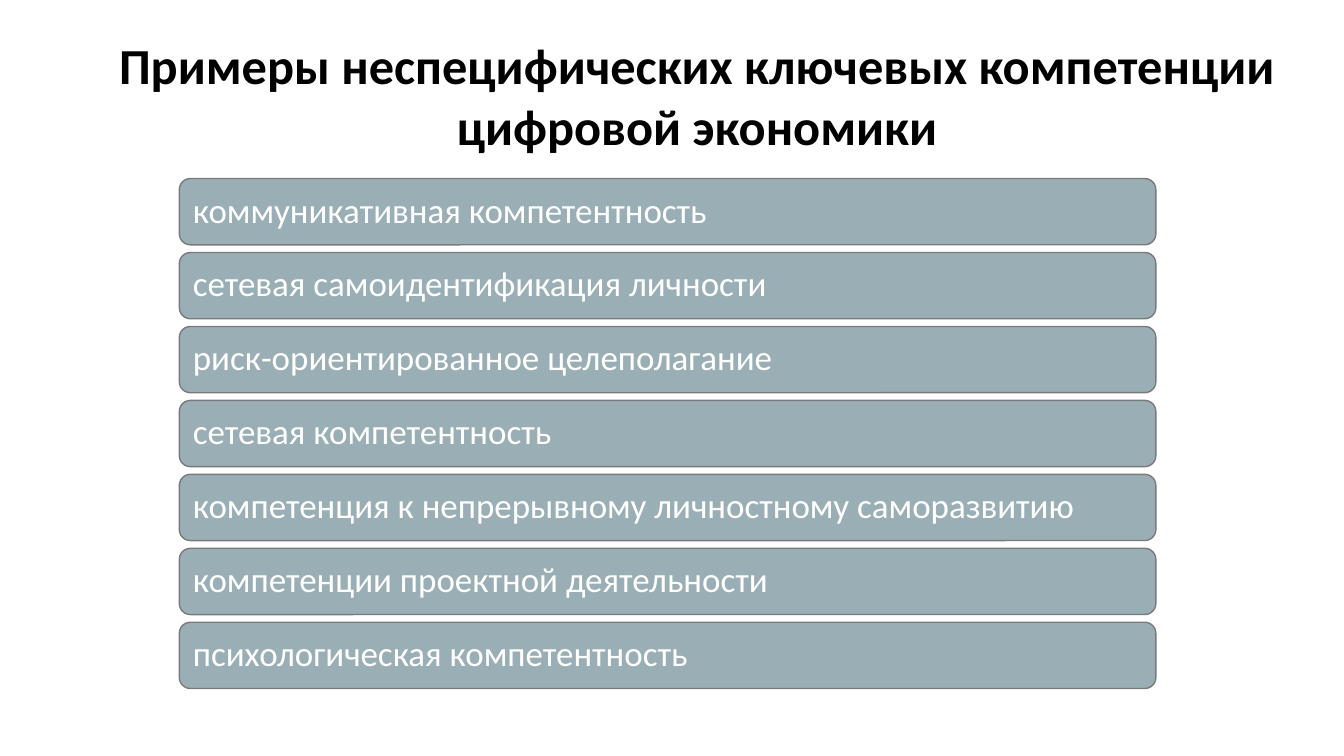
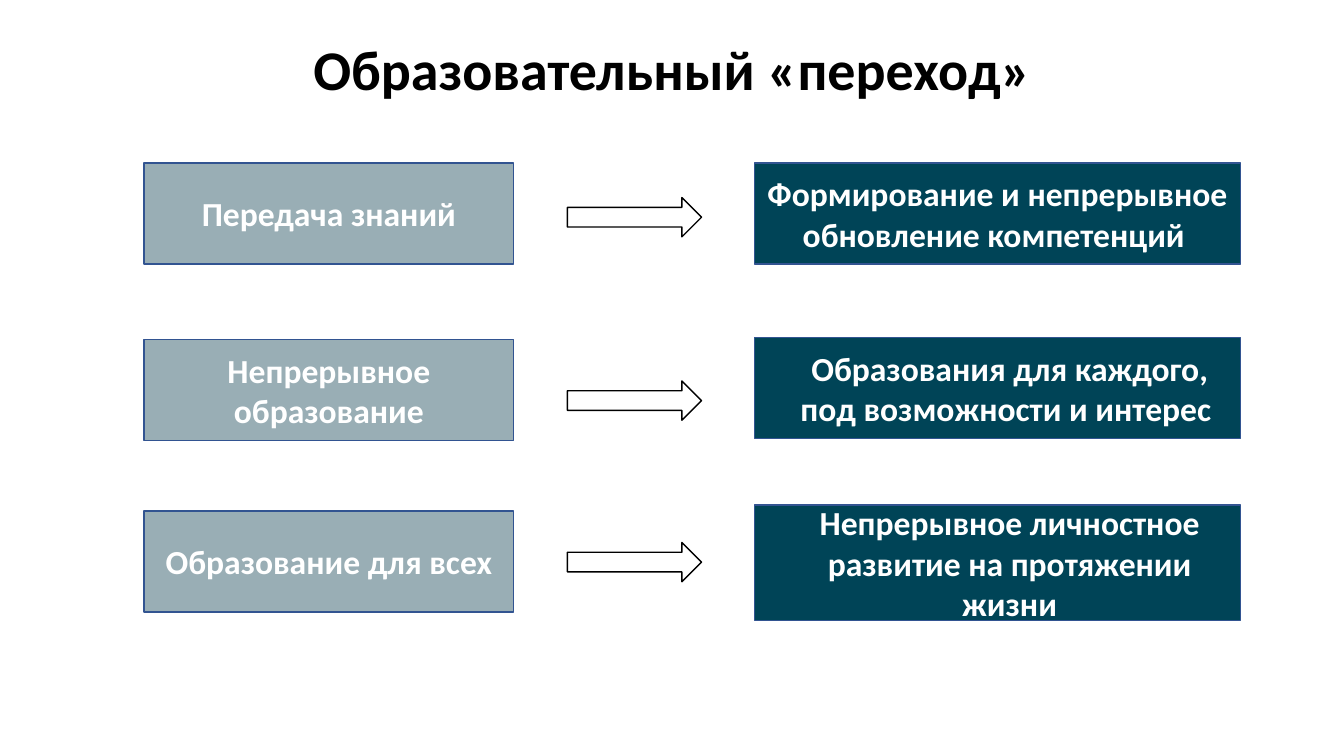
from pptx import Presentation
from pptx.dml.color import RGBColor
from pptx.enum.shapes import MSO_SHAPE
from pptx.enum.text import MSO_ANCHOR, PP_ALIGN
from pptx.util import Cm, Pt

LEFT, CENTER = PP_ALIGN.LEFT, PP_ALIGN.CENTER
MIDDLE = MSO_ANCHOR.MIDDLE
RECTANGLE = MSO_SHAPE.RECTANGLE
ROUNDED = MSO_SHAPE.ROUNDED_RECTANGLE
RIGHT_ARROW = MSO_SHAPE.RIGHT_ARROW

FONT = "Calibri"
COLORS = {
    "title": "000000",
    "text": "FFFFFF",
    "muted": "99AEB5",
    "deep": "004457",
    "bar_line": "7A7A7A",
    "box_line": "325491",
    "arrow_line": "000000",
}

COMPETENCES_TITLE = [
    "Примеры неспецифических ключевых компетенции ",
    "цифровой экономики ",
]
COMPETENCES = [
    "коммуникативная компетентность",
    "сетевая самоидентификация личности",
    "риск-ориентированное целеполагание",
    "сетевая компетентность",
    "компетенция к непрерывному личностному саморазвитию",
    "компетенции проектной деятельности",
    "психологическая компетентность",
]

TRANSITION_TITLE = ["Образовательный «переход»"]
TRANSITIONS = [
    {
        "before": ("Передача знаний", 4.11),
        "arrow_top": 4.98,
        "after": ("Формирование и непрерывное обновление компетенций ", 4.11, 2.54, 0.25),
    },
    {
        "before": ("Непрерывное образование", 8.56),
        "arrow_top": 9.6,
        "after": ("Образования для каждого, под возможности и интерес ", 8.51, 2.54, 0.86),
    },
    {
        "before": ("Образование для всех", 12.88),
        "arrow_top": 13.67,
        "after": ("Непрерывное личностное развитие на протяжении жизни", 12.73, 2.9, 0.86),
    },
]


def rgb(name):
    return RGBColor.from_string(COLORS[name])


def write(paragraph, text, size, color, bold, align, spacing):
    paragraph.alignment = align
    paragraph.line_spacing = spacing
    run = paragraph.add_run()
    run.text = text
    run.font.name = FONT
    run.font.size = Pt(size)
    run.font.bold = bold
    run.font.color.rgb = rgb(color)


def add_title(slide, lines, place, size, spacing):
    frame = slide.shapes.add_textbox(*map(Cm, place)).text_frame
    frame.word_wrap = True
    for index, line in enumerate(lines):
        paragraph = frame.add_paragraph() if index else frame.paragraphs[0]
        write(paragraph, line, size, "title", True, CENTER, spacing)


def add_figure(slide, kind, place, line, fill=None):
    figure = slide.shapes.add_shape(kind, *map(Cm, place))
    figure.shadow.inherit = False
    figure.line.color.rgb = rgb(line)
    figure.line.width = Pt(1)
    if fill:
        figure.fill.solid()
        figure.fill.fore_color.rgb = rgb(fill)
    else:
        figure.fill.background()
    return figure


def label(figure, text, size, bold, align, spacing, indent):
    frame = figure.text_frame
    frame.word_wrap = True
    frame.vertical_anchor = MIDDLE
    frame.margin_left = Cm(indent)
    write(frame.paragraphs[0], text, size, "text", bold, align, spacing)


def build_competences(slide):
    add_title(slide, COMPETENCES_TITLE, (2.08, 0.74, 31.27, 3.33), 36, 1.0)
    first_top, last_top = 4.5, 15.68
    pitch = (last_top - first_top) / (len(COMPETENCES) - 1)
    for index, competence in enumerate(COMPETENCES):
        place = (4.52, first_top + index * pitch, 24.61, 1.67)
        bar = add_figure(slide, ROUNDED, place, "bar_line", "muted")
        label(bar, competence, 25, False, LEFT, 0.9, 0.26)


def build_transition(slide):
    add_title(slide, TRANSITION_TITLE, (5.51, 0.94, 22.86, 3.18), 40, 0.9)
    for row in TRANSITIONS:
        text, top = row["before"]
        before = add_figure(slide, RECTANGLE, (3.63, top, 9.32, 2.54), "box_line", "muted")
        label(before, text, 24, True, CENTER, 1.0, 0.25)
        text, top, height, indent = row["after"]
        after = add_figure(slide, RECTANGLE, (19.02, top, 12.24, height), "box_line", "deep")
        label(after, text, 24, True, CENTER, 1.0, indent)
        add_figure(slide, RIGHT_ARROW, (14.3, row["arrow_top"], 3.38, 0.99), "arrow_line")


def main():
    deck = Presentation()
    deck.slide_width, deck.slide_height = Cm(33.87), Cm(19.05)
    blank = deck.slide_layouts[6]
    for build in (build_competences, build_transition):
        build(deck.slides.add_slide(blank))
    deck.save("out.pptx")


if __name__ == "__main__":
    main()
